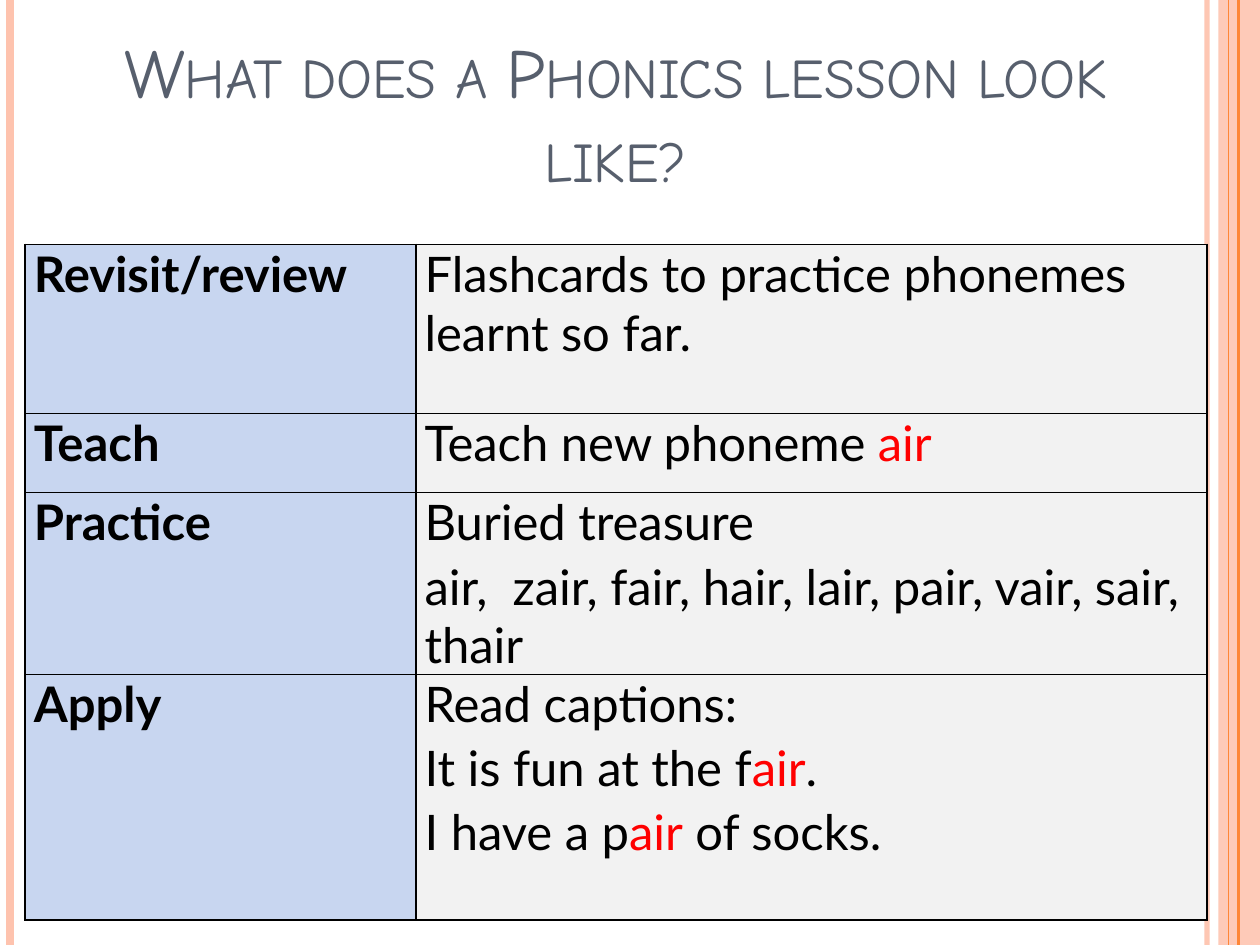
from lxml import etree
from pptx import Presentation
from pptx.dml.color import RGBColor
from pptx.enum.shapes import MSO_CONNECTOR, MSO_SHAPE
from pptx.enum.text import MSO_ANCHOR, MSO_AUTO_SIZE, PP_ALIGN
from pptx.oxml.ns import qn
from pptx.util import Inches, Pt

STRAIGHT = MSO_CONNECTOR.STRAIGHT
RECTANGLE = MSO_SHAPE.RECTANGLE
BOTTOM = MSO_ANCHOR.BOTTOM
NO_AUTOFIT = MSO_AUTO_SIZE.NONE
CENTER = PP_ALIGN.CENTER

COLORS = {
    "peach": "FEC3AE", "orange": "FE8637", "title": "575F6D",
    "stage": "C8D6F0", "activity": "F2F2F2", "black": "000000", "red": "FF0000",
}


def set_alpha(shape, percent):
    for color in shape._element.spPr.iter(qn("a:srgbClr")):
        etree.SubElement(color, qn("a:alpha")).set("val", str(percent * 1000))


def add_border(cell, side):
    line = etree.SubElement(cell._tc.get_or_add_tcPr(), qn(f"a:{side}"), w=str(Pt(1)))
    fill = etree.SubElement(line, qn("a:solidFill"))
    etree.SubElement(fill, qn("a:srgbClr"), val=COLORS["black"])


presentation = Presentation()
presentation.slide_width = Inches(10)
presentation.slide_height = Inches(7.5)
slide = presentation.slides.add_slide(presentation.slide_layouts[5])

band = slide.shapes.add_shape(RECTANGLE, Inches(9.67), 0, Inches(0.33), Inches(7.5))
band.shadow.inherit = False
band.fill.solid()
band.fill.fore_color.rgb = RGBColor.from_string(COLORS["peach"])
band.line.fill.background()
set_alpha(band, 87)

stripes = [
    (9.58, "peach", 3, 93),
    (0.08, "peach", 4.5, 100),
    (9.83, "orange", 1.5, 100),
    (9.75, "orange", 0.75, 100),
]
for left, color, width, opacity in stripes:
    stripe = slide.shapes.add_connector(STRAIGHT, Inches(left), 0, Inches(left), Inches(7.5))
    stripe.line.color.rgb = RGBColor.from_string(COLORS[color])
    stripe.line.width = Pt(width)
    etree.SubElement(stripe._element.spPr, qn("a:effectLst"))
    if opacity < 100:
        set_alpha(stripe, opacity)

title = slide.shapes.title
title.left, title.top = Inches(0.8), Inches(0.36)
title.width, title.height = Inches(8.17), Inches(1.25)
title.text_frame.text = "What does a Phonics lesson look like?"
title.text_frame.auto_size = NO_AUTOFIT
title.text_frame.vertical_anchor = BOTTOM
title_paragraph = title.text_frame.paragraphs[0]
title_paragraph.alignment = CENTER
title_run = title_paragraph.runs[0]
title_run.font.name = "Comic Neue"
title_run.font.size = Pt(40)
title_run.font.color.rgb = RGBColor.from_string(COLORS["title"])
title_run._r.get_or_add_rPr().set("cap", "small")

lesson = [
    (1.34, "Revisit/review", [[("Flashcards to practice phonemes learnt so far.", "black")]]),
    (0.63, "Teach", [[("Teach new phoneme ", "black"), ("air", "red")]]),
    (1.44, "Practice", [
        [("Buried treasure", "black")],
        [("air,  zair, fair, hair, lair, pair, vair, sair, thair", "black")],
    ]),
    (1.95, "Apply", [
        [("Read captions:", "black")],
        [("It is fun at the f", "black"), ("air", "red"), (".", "black")],
        [("I have a p", "black"), ("air", "red"), (" of socks.", "black")],
    ]),
]
table = slide.shapes.add_table(
    len(lesson), 2, Inches(0.2), Inches(1.94), Inches(9.38), Inches(5.36)
).table
table.first_row = False
table.horz_banding = False
table.columns[0].width = Inches(3.1)
table.columns[1].width = Inches(6.28)

for row_index, (height, stage, activity) in enumerate(lesson):
    table.rows[row_index].height = Inches(height)
    contents = [("stage", [[(stage, "black")]]), ("activity", activity)]
    for column_index, (kind, lines) in enumerate(contents):
        cell = table.cell(row_index, column_index)
        cell.margin_left = cell.margin_right = Inches(0.07)
        cell.margin_top = cell.margin_bottom = 0
        for side in ("lnL", "lnR", "lnT", "lnB"):
            add_border(cell, side)
        cell.fill.solid()
        cell.fill.fore_color.rgb = RGBColor.from_string(COLORS[kind])
        for line_index, pieces in enumerate(lines):
            if line_index:
                paragraph = cell.text_frame.add_paragraph()
            else:
                paragraph = cell.text_frame.paragraphs[0]
            paragraph.space_before = Pt(3)
            for text, color in pieces:
                run = paragraph.add_run()
                run.text = text
                run.font.name = "Lato"
                run.font.size = Pt(28)
                run.font.bold = kind == "stage"
                run.font.color.rgb = RGBColor.from_string(COLORS[color])

presentation.save("out.pptx")
